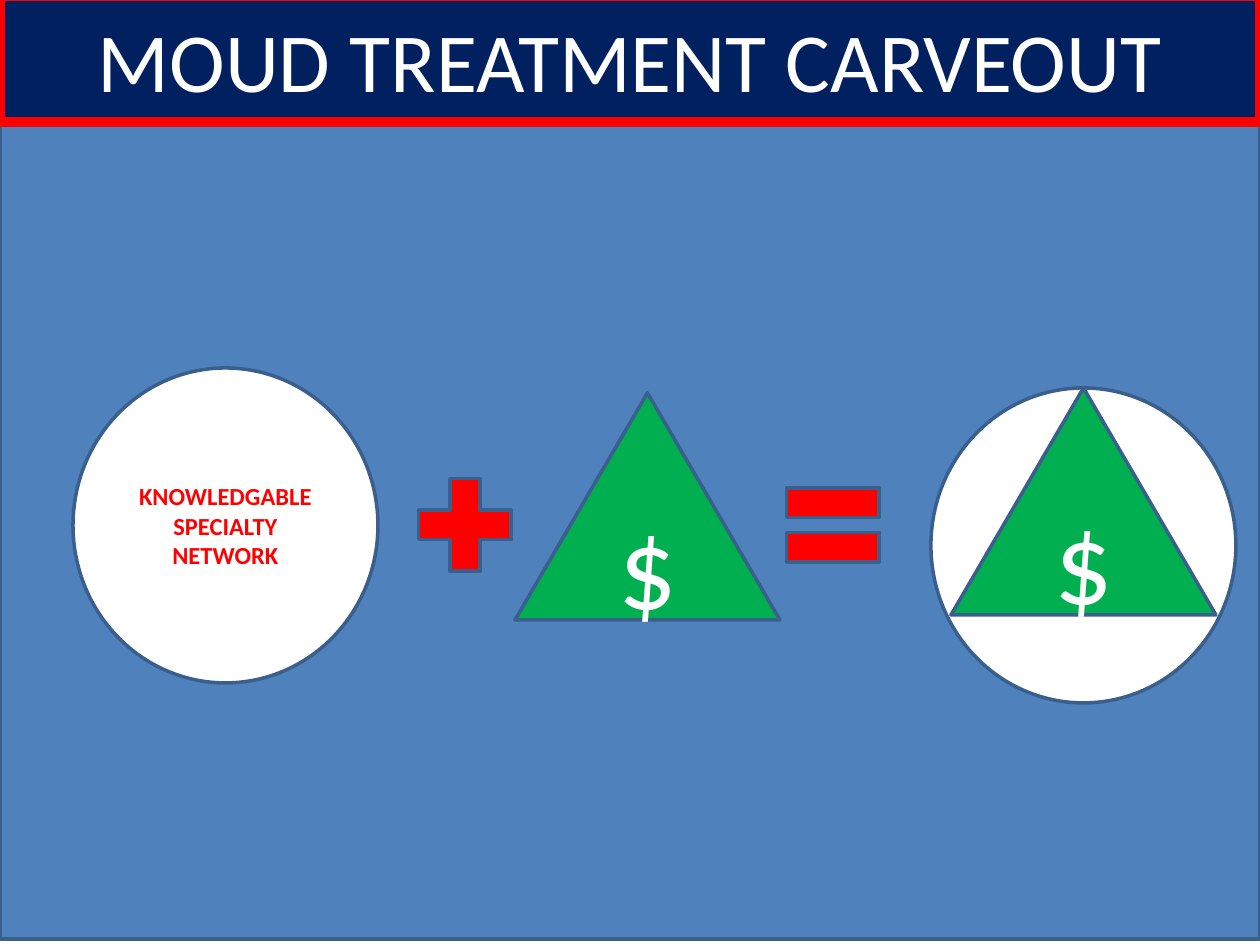
from pptx import Presentation
from pptx.dml.color import RGBColor
from pptx.enum.shapes import MSO_SHAPE
from pptx.enum.text import MSO_ANCHOR, PP_ALIGN
from pptx.util import Emu, Pt

PX = 914400 // 126
RECT, OVAL = MSO_SHAPE.RECTANGLE, MSO_SHAPE.OVAL
TRIANGLE = MSO_SHAPE.ISOSCELES_TRIANGLE
PLUS, EQUAL = MSO_SHAPE.MATH_PLUS, MSO_SHAPE.MATH_EQUAL
MIDDLE, CENTER = MSO_ANCHOR.MIDDLE, PP_ALIGN.CENTER

# Content
TITLE = "MOUD TREATMENT CARVEOUT"
NETWORK = "KNOWLEDGABLE\nSPECIALTY\nNETWORK"
FUNDING = "$"

# Palette and sizes in px
BLUE, EDGE, NAVY = "4F81BD", "3A5F8C", "002060"
RED, GREEN, WHITE = "FF0000", "00B050", "FFFFFF"
SLIDE_W, SLIDE_H = 1260, 945
CIRCLE_W, CIRCLE_H = 305, 315
TRIANGLE_W, TRIANGLE_H = 265, 227
SIGN = 126
SIGN_TOP = 462
RESULT_LEFT, RESULT_TOP = 931, 388
RESULT_TRIANGLE_LEFT = RESULT_LEFT + (CIRCLE_W - TRIANGLE_W) // 2


def color(value):
    return RGBColor.from_string(value)


def add_part(slide, kind, box, fill, edge=EDGE, weight=2):
    part = slide.shapes.add_shape(kind, *(Emu(n * PX) for n in box))
    part.shadow.inherit = False
    part.fill.solid()
    part.fill.fore_color.rgb = color(fill)
    part.line.color.rgb = color(edge)
    part.line.width = Pt(weight)
    return part


def write(part, text, size, text_color=WHITE, bold=False):
    frame = part.text_frame
    frame.word_wrap = True
    frame.vertical_anchor = MIDDLE
    frame.text = text
    for paragraph in frame.paragraphs:
        paragraph.alignment = CENTER
        for run in paragraph.runs:
            run.font.name = "Calibri"
            run.font.size = Pt(size)
            run.font.bold = bold
            run.font.color.rgb = color(text_color)


def add_circle(slide, left, top):
    return add_part(slide, OVAL, (left, top, CIRCLE_W, CIRCLE_H), WHITE)


def add_funding(slide, left, top):
    funding = add_part(slide, TRIANGLE, (left, top, TRIANGLE_W, TRIANGLE_H), GREEN)
    write(funding, FUNDING, 66)


def add_sign(slide, kind, left):
    add_part(slide, kind, (left, SIGN_TOP, SIGN, SIGN), RED)


def main():
    deck = Presentation()
    deck.slide_width, deck.slide_height = Emu(SLIDE_W * PX), Emu(SLIDE_H * PX)
    slide = deck.slides.add_slide(deck.slide_layouts[6])

    # Backdrop and title band
    add_part(slide, RECT, (0, -6, SLIDE_W, SLIDE_H), BLUE)
    title = add_part(slide, RECT, (0, -4, SLIDE_W, 126), NAVY, RED, 6)
    write(title, TITLE, 48)

    # Network + funding =
    network = add_circle(slide, 73, 368)
    write(network, NETWORK, 14, RED, True)
    add_sign(slide, PLUS, 402)
    add_funding(slide, 515, 393)
    add_sign(slide, EQUAL, 770)

    # Result: funding inside the network
    add_circle(slide, RESULT_LEFT, RESULT_TOP)
    add_funding(slide, RESULT_TRIANGLE_LEFT, RESULT_TOP)

    deck.save("out.pptx")


if __name__ == "__main__":
    main()
